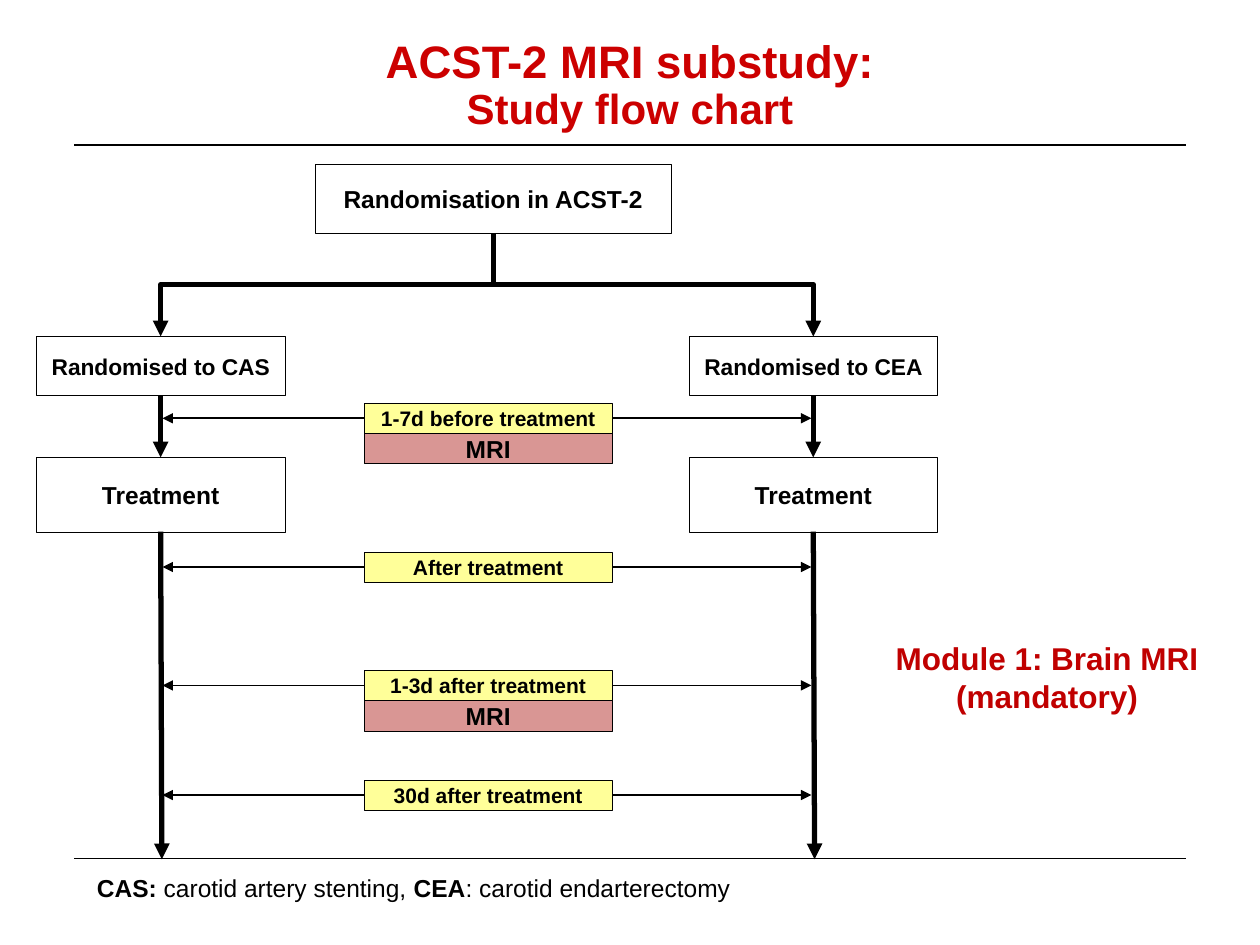
from dataclasses import dataclass

from lxml import etree
from pptx import Presentation
from pptx import util as u
from pptx.dml.color import RGBColor
from pptx.enum import shapes, text
from pptx.oxml.ns import qn


@dataclass(frozen=True)
class Theme:
    """Colours, font and type sizes of the slide."""
    font: str = "Arial"
    black: str = "000000"
    white: str = "FFFFFF"
    title_red: str = "CC0000"
    module_red: str = "C00000"
    visit_yellow: str = "FFFF99"
    mri_pink: str = "D99694"
    title: int = 26
    subtitle: int = 24
    module: int = 18
    body: int = 14
    arm: int = 13
    visit: int = 12
    hairline: float = 0.25
    thin: float = 1
    thick: float = 3


THEME = Theme()
TOP, LEFT, BOTTOM, RIGHT = range(4)
CENTER = text.PP_ALIGN.CENTER


def add_run(paragraph, words, size, color=THEME.black, bold=True):
    """Append one formatted run to a paragraph."""
    run = paragraph.add_run()
    run.text = words
    run.font.name = THEME.font
    run.font.size = u.Pt(size)
    run.font.bold = bold
    run.font.color.rgb = RGBColor.from_string(color)


def add_text_box(slide, box, align=text.PP_ALIGN.LEFT):
    """Add a wrapping text box and return its frame and first paragraph."""
    frame = slide.shapes.add_textbox(*map(u.Inches, box)).text_frame
    frame.word_wrap = True
    paragraph = frame.paragraphs[0]
    paragraph.alignment = align
    return frame, paragraph


def add_process(slide, box, words, size, fill=THEME.white):
    """Add one outlined process box with centred bold text."""
    shape = slide.shapes.add_shape(
        shapes.MSO_SHAPE.FLOWCHART_PROCESS, *map(u.Inches, box))
    shape.shadow.inherit = False
    shape.fill.solid()
    shape.fill.fore_color.rgb = RGBColor.from_string(fill)
    shape.line.color.rgb = RGBColor.from_string(THEME.black)
    shape.line.width = u.Pt(THEME.hairline)
    shape.text_frame.vertical_anchor = text.MSO_ANCHOR.MIDDLE
    paragraph = shape.text_frame.paragraphs[0]
    paragraph.alignment = CENTER
    add_run(paragraph, words, size)
    return shape


def add_line(slide, start, end, weight, arrow=False,
             kind=shapes.MSO_CONNECTOR.STRAIGHT):
    """Add a black connector between two points given in inches."""
    line = slide.shapes.add_connector(kind, *map(u.Inches, (*start, *end)))
    line.line.color.rgb = RGBColor.from_string(THEME.black)
    line.line.width = u.Pt(weight)
    if arrow:
        etree.SubElement(line.line._get_or_add_ln(), qn("a:tailEnd"),
                         type="triangle")
    etree.SubElement(line._element.spPr, qn("a:effectLst"))
    return line


def add_branch(slide, source, target):
    """Add an elbow arrow that leaves a box downwards and enters one from above."""
    line = add_line(slide, (0, 0), (1, 1), THEME.thick, True,
                    shapes.MSO_CONNECTOR.ELBOW)
    line.begin_connect(source, BOTTOM)
    line.end_connect(target, TOP)
    start_x, start_y = source.left + source.width // 2, source.top + source.height
    end_x, end_y = target.left + target.width // 2, target.top
    drop, reach = end_y - start_y, abs(end_x - start_x)
    line.left = (start_x + end_x - drop) // 2
    line.top = (start_y + end_y - reach) // 2
    line.width, line.height = drop, reach
    to_right = end_x > start_x
    frame = line._element.spPr.find(qn("a:xfrm"))
    frame.set("rot", str((270 if to_right else 90) * 60000))
    frame.set("flipH", "1" if to_right else "0")
    frame.set("flipV", "0")


def add_header(slide, box):
    """Place the two-line title and the rule under it."""
    left, top, width, height = box
    frame, paragraph = add_text_box(slide, box, CENTER)
    frame.margin_left = frame.margin_right = 0
    frame.margin_top = frame.margin_bottom = 0
    paragraph.line_spacing = 0.9
    add_run(paragraph, "ACST-2 MRI substudy:", THEME.title, THEME.title_red)
    paragraph.add_line_break()
    add_run(paragraph, "Study flow chart", THEME.subtitle, THEME.title_red)
    add_line(slide, (left, 1.15), (left + width, 1.15), 1.5)


def add_arm(slide, box, name, source):
    """Place one treatment arm from randomisation to the end of follow-up."""
    left, top, width, height = box
    randomised = add_process(slide, (left, top, width, 0.47),
                             f"Randomised to {name}", THEME.arm)
    treatment = add_process(slide, (left, top + 0.96, width, 0.59),
                            "Treatment", THEME.body)
    add_branch(slide, source, randomised)
    middle = left + width / 2
    step = add_line(slide, (middle, top + 0.47), (middle, top + 0.96),
                    THEME.thick, True)
    step.begin_connect(randomised, BOTTOM)
    step.end_connect(treatment, TOP)
    follow_up = add_line(slide, (middle, top + 1.55),
                         (middle + 0.01, top + height), THEME.thick, True)
    follow_up.begin_connect(treatment, BOTTOM)


def add_visit(slide, box, words, has_mri, arm_ends):
    """Place one visit label, its arrows to both arms and its MRI box."""
    left, top, width, height = box
    label = add_process(slide, box, words, THEME.visit, THEME.visit_yellow)
    middle = top + height / 2
    sides = ((LEFT, left), (RIGHT, left + width))
    for (site, edge), arm_end in zip(sides, arm_ends):
        arrow = add_line(slide, (edge, middle), (arm_end, middle),
                         THEME.thin, True)
        arrow.begin_connect(label, site)
    if has_mri:
        add_process(slide, (left, top + height, width, height), "MRI",
                    THEME.body, THEME.mri_pink)


def add_flow_chart(slide, box):
    """Place the randomisation box, both arms and the visits between them."""
    left, top, width, height = box
    arm_width, arm_top = 1.97, top + 1.37
    source = add_process(slide, (left + 2.21, top, 2.83, 0.55),
                         "Randomisation in ACST-2", THEME.body)
    for name, arm_left in (("CAS", left), ("CEA", left + width - arm_width)):
        add_arm(slide, (arm_left, arm_top, arm_width, top + height - arm_top),
                name, source)
    visits = (
        (3.2, "1-7d before treatment", True),
        (4.38, "After treatment", False),
        (5.32, "1-3d after treatment", True),
        (6.19, "30d after treatment", False),
    )
    arm_ends = (left + 1, left + width - 1)
    for visit_top, words, has_mri in visits:
        add_visit(slide, (left + 2.6, visit_top, 1.97, 0.24), words, has_mri,
                  arm_ends)


def add_module_note(slide, box):
    """Place the module name beside the flow chart."""
    paragraph = add_text_box(slide, box, CENTER)[1]
    add_run(paragraph, "Module 1: Brain MRI (mandatory)", THEME.module,
            THEME.module_red)


def add_footer(slide, box):
    """Place the closing rule and the abbreviations under it."""
    left, top, width, height = box
    add_line(slide, (left, top), (left + width, top), 0.5)
    paragraph = add_text_box(slide, (left + 0.08, top + 0.07, 6.22, height))[1]
    for words, bold in (("CAS: ", True), ("carotid artery stenting, ", False),
                        ("CEA", True), (": carotid endarterectomy", False)):
        add_run(paragraph, words, THEME.body, bold=bold)


def main():
    """Build the study flow chart slide and save it."""
    presentation = Presentation()
    presentation.slide_width = u.Inches(10)
    presentation.slide_height = u.Inches(7.5)
    slide = presentation.slides.add_slide(presentation.slide_layouts[6])
    add_header(slide, (0.59, 0.31, 8.82, 0.92))
    add_footer(slide, (0.59, 6.81, 8.82, 0.57))
    add_flow_chart(slide, (0.29, 1.3, 7.15, 5.52))
    add_module_note(slide, (6.97, 5.02, 2.68, 1.01))
    presentation.save("out.pptx")


if __name__ == "__main__":
    main()
